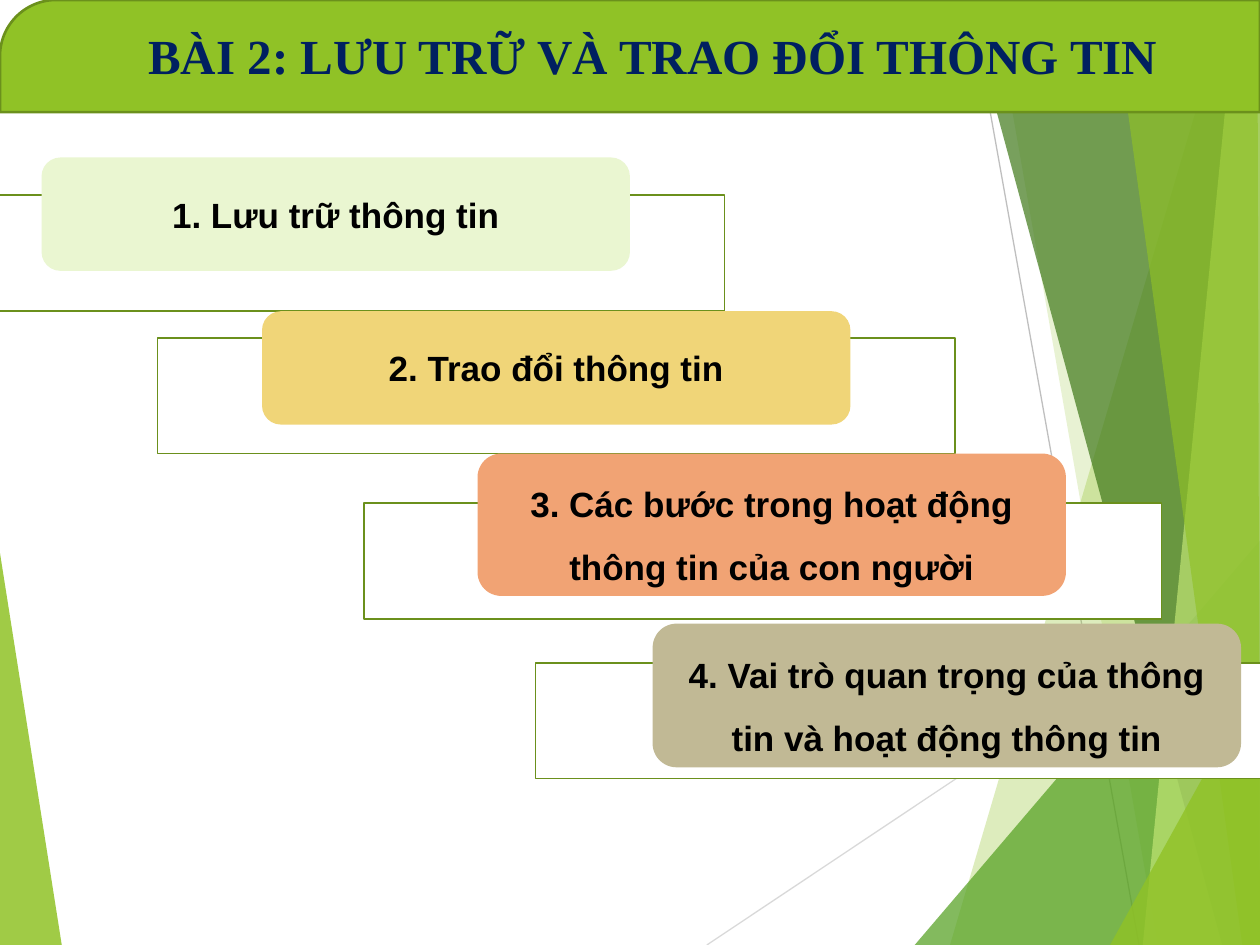
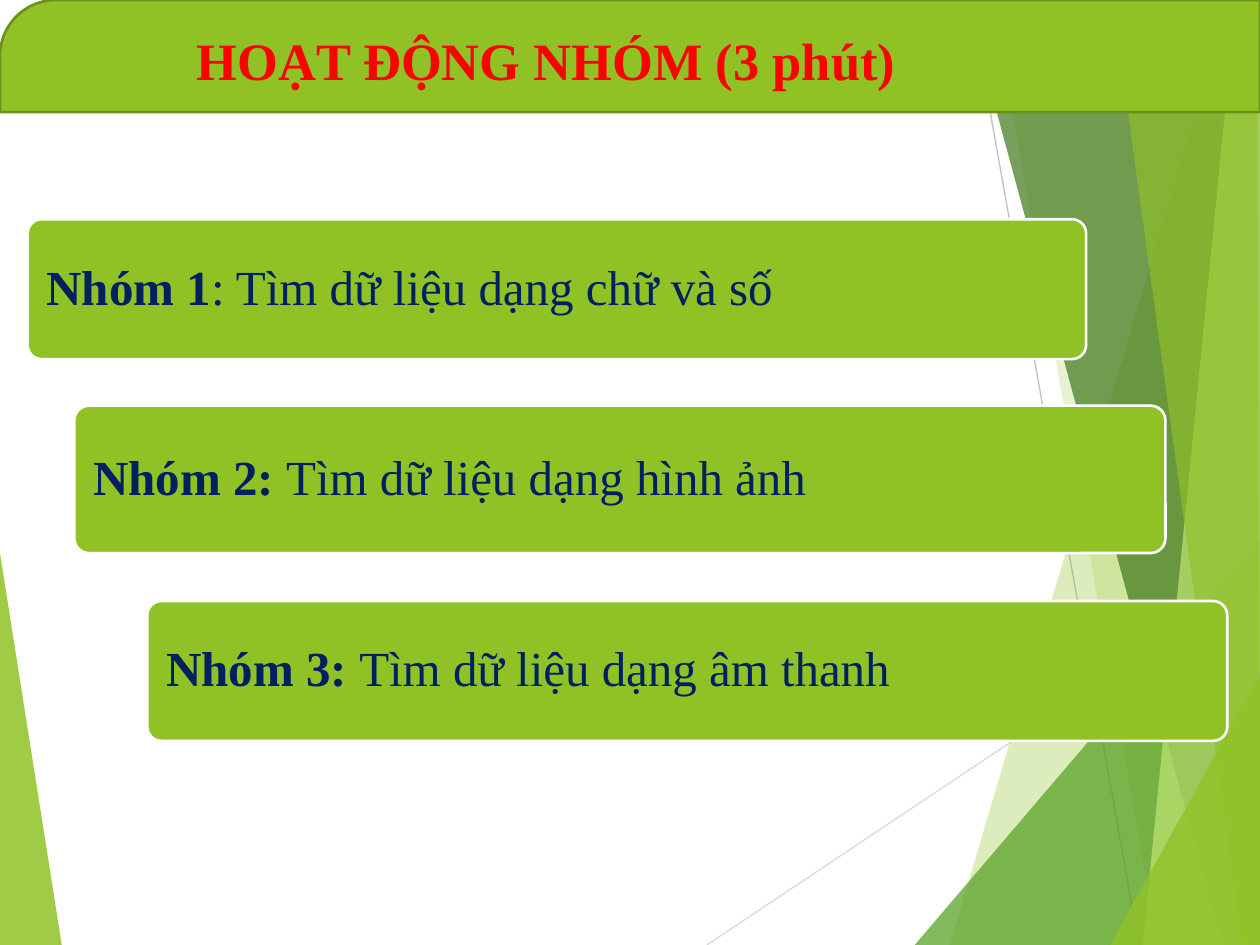
"""Builds two lesson slides on storing and exchanging information."""
from lxml.etree import SubElement
from pptx import Presentation
from pptx.dml.color import RGBColor
from pptx.enum.shapes import MSO_CONNECTOR as Connector, MSO_SHAPE as Shape
from pptx.enum.text import MSO_ANCHOR as Anchor, MSO_AUTO_SIZE as AutoSize, PP_ALIGN as Align
from pptx.oxml.ns import qn
from pptx.util import Inches, Pt

COLORS = {
    "lime": "90C226", "pale lime": "C0E474", "green": "54A021", "forest": "3F7819",
    "edge": "6B901C", "white": "FFFFFF", "black": "000000", "navy": "002060",
    "red": "FF0000", "light gray": "D9D9D9", "gray": "BFBFBF",
    "mint": "EAF6D1", "sand": "F0D578", "peach": "F1A374", "khaki": "C1B995",
}
HEADING_FONT = "Times New Roman"
TOPIC_FONT = "Arial"

RAYS = [
    ((5.61, 7.5), (10, 4.57), "light gray"),
    ((7.7, 0), (9.04, 7.5), "gray"),
]
LEFT_FACET = ([(0, 4.39), (0.49, 7.5), (0, 7.5)], "lime", 85)
RIGHT_FACETS = [
    ([(9.75, 0), (7.54, 7.5), (10, 7.5), (10, 0)], "lime", 30),
    ([(7.88, 0), (9.19, 7.5), (10, 7.5), (10, 0)], "lime", 20),
    ([(7.26, 7.5), (10, 4.29), (10, 7.5)], "green", 72),
    ([(7.67, 0), (9.7, 7.5), (10, 7.5), (10, 0)], "forest", 70),
    ([(9.81, 0), (9.07, 7.5), (10, 7.5), (10, 0)], "pale lime", 70),
    ([(8.83, 0), (9.86, 7.5), (10, 7.5), (9.98, 0)], "lime", 65),
    ([(8.81, 7.5), (10, 5.35), (10, 7.5)], "lime", 80),
]
TOPICS = [
    ("1. Lưu trữ thông tin", "mint", (-0.58, 1.55), (0.33, 1.25), 0.9, 1),
    ("2. Trao đổi thông tin", "sand", (1.25, 2.68), (2.08, 2.47), 0.9, 1),
    ("3. Các bước trong hoạt động thông tin của con người", "peach",
     (2.89, 3.99), (3.79, 3.6), 1.13, 1.5),
    ("4. Vai trò quan trọng của thông tin và hoạt động thông tin", "khaki",
     (4.25, 5.26), (5.18, 4.95), 1.14, 1.5),
]
GROUP_TASKS = [
    ("Nhóm 1", ": Tìm dữ liệu dạng chữ và số", (0.22, 1.74, 8.4, 1.11)),
    ("Nhóm 2: ", "Tìm dữ liệu dạng hình ảnh", (0.59, 3.22, 8.66, 1.17)),
    ("Nhóm 3: ", "Tìm dữ liệu dạng âm thanh", (1.17, 4.77, 8.57, 1.11)),
]


def color(name):
    """Return the named colour."""
    return RGBColor.from_string(COLORS[name])


def write(frame, *parts, font=HEADING_FONT, size=28, ink="navy", align=Align.LEFT,
          anchor=Anchor.MIDDLE, spacing=1, inset=None):
    """Write one paragraph whose first part is bold."""
    frame.word_wrap = True
    frame.vertical_anchor = anchor
    if inset is not None:
        frame.margin_left = frame.margin_right = Inches(inset)
        frame.margin_top = frame.margin_bottom = Inches(inset)
    paragraph = frame.paragraphs[0]
    paragraph.alignment = align
    paragraph.line_spacing = spacing
    for index, part in enumerate(parts):
        run = paragraph.add_run()
        run.text = part
        run.font.name = font
        run.font.size = Pt(size)
        run.font.bold = index == 0
        run.font.color.rgb = color(ink)


class Deck:
    """Holds the presentation, its shared look and the current slide."""

    def __init__(self):
        """Set up the page size and the title-only layout."""
        self.show = Presentation()
        self.show.slide_width, self.show.slide_height = Inches(10), Inches(7.5)
        self.layout = self.show.slide_layouts[5]
        self.slide = None
        for placeholder in list(self.layout.placeholders)[1:]:
            placeholder.element.getparent().remove(placeholder.element)

    def add_slide(self, heading, box, size, ink):
        """Start a slide and format its title."""
        first = self.slide is None
        self.slide = self.show.slides.add_slide(self.layout)
        if first:
            self.backdrop()
        title = self.slide.shapes.title
        title.left, title.top, title.width, title.height = map(Inches, box)
        write(title.text_frame, heading, size=size, ink=ink, align=Align.CENTER,
              anchor=Anchor.TOP)
        title.text_frame.auto_size = AutoSize.SHAPE_TO_FIT_TEXT

    def backdrop(self):
        """Draw the shared decoration and hand it over to the layout."""
        pieces = [self.facet(*LEFT_FACET)]
        pieces += [self.ray(*ray) for ray in RAYS]
        pieces += [self.facet(*facet) for facet in RIGHT_FACETS]
        band = self.box(Shape.SNIP_ROUND_RECTANGLE, (0, 0, 10, 0.89), "lime", "edge", 1.5)
        band.adjustments[0], band.adjustments[1] = 0.5, 0
        for piece in pieces + [band]:
            self.layout.shapes.element.append(piece.element)

    def paint(self, shape, fill, line=None, width=1):
        """Set the fill and outline of a shape."""
        shape.shadow.inherit = False
        shape.fill.solid()
        shape.fill.fore_color.rgb = color(fill)
        if line:
            shape.line.color.rgb = color(line)
            shape.line.width = Pt(width)
        else:
            shape.line.fill.background()

    def box(self, kind, place, fill, line=None, width=1):
        """Add a preset shape."""
        shape = self.slide.shapes.add_shape(kind, *map(Inches, place))
        self.paint(shape, fill, line, width)
        return shape

    def facet(self, corners, fill, opacity):
        """Add a translucent polygon."""
        points = [(Inches(x), Inches(y)) for x, y in corners]
        builder = self.slide.shapes.build_freeform(*points[0])
        builder.add_line_segments(points[1:], close=True)
        polygon = builder.convert_to_shape()
        self.paint(polygon, fill)
        tint = polygon.element.spPr.find(qn("a:solidFill")).find(qn("a:srgbClr"))
        SubElement(tint, qn("a:alpha"), val=str(opacity * 1000))
        return polygon

    def ray(self, start, end, ink):
        """Add a thin straight line."""
        line = self.slide.shapes.add_connector(
            Connector.STRAIGHT, *map(Inches, start + end))
        line.line.color.rgb = color(ink)
        line.line.width = Pt(0.75)
        SubElement(line.element.spPr, qn("a:effectLst"))
        return line

    def topic(self, text, fill, frame_at, label_at, height, spacing):
        """Add a coloured topic label over its outlined frame."""
        self.box(Shape.RECTANGLE, (*frame_at, 6.33, 0.92), "white", "edge")
        label = self.box(Shape.ROUNDED_RECTANGLE, (*label_at, 4.67, height), fill)
        write(label.text_frame, text, font=TOPIC_FONT, size=20, ink="black",
              align=Align.CENTER, spacing=spacing)

    def group_task(self, group, task, place):
        """Add a task card for one group."""
        card = self.box(Shape.ROUNDED_RECTANGLE, place, "lime", "white", 1.5)
        card.adjustments[0] = 0.1
        left, top, _, height = place
        caption = self.slide.shapes.add_textbox(
            *map(Inches, (left + 0.03, top + 0.03, 6.9, height - 0.06)))
        write(caption.text_frame, group, task, spacing=0.9, inset=0.12)


def main():
    """Build both slides and save them."""
    deck = Deck()
    deck.add_slide("BÀI 2: LƯU TRỮ VÀ TRAO ĐỔI THÔNG TIN", (0.64, 0.15, 9.08, 0.57), 28, "navy")
    for topic in TOPICS:
        deck.topic(*topic)
    deck.add_slide("HOẠT ĐỘNG NHÓM (3 phút)", (0.25, 0.17, 8.17, 0.61), 30, "red")
    for task in GROUP_TASKS:
        deck.group_task(*task)
    deck.show.save("out.pptx")


if __name__ == "__main__":
    main()
